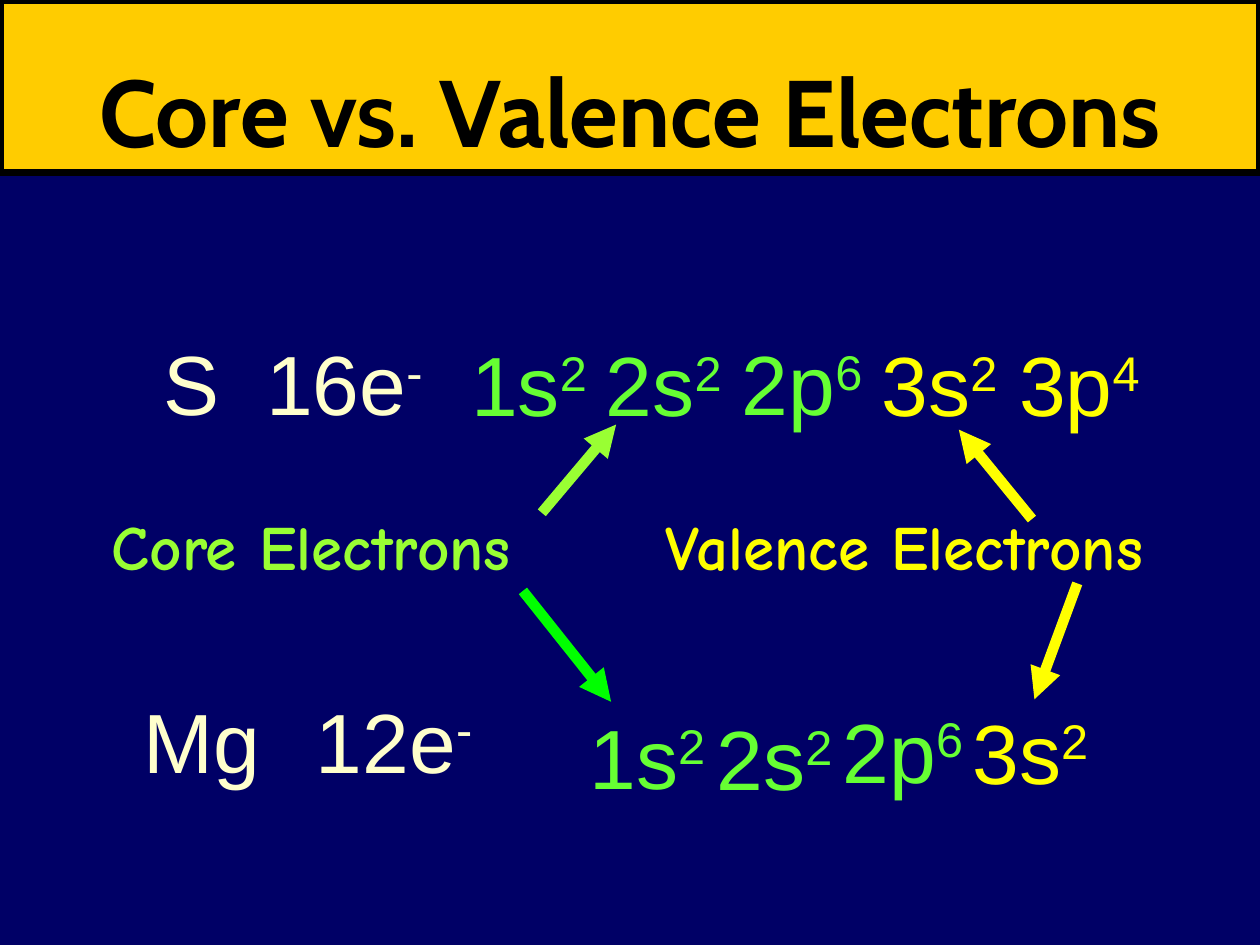
from lxml import etree
from pptx import Presentation
from pptx.dml.color import RGBColor
from pptx.enum.shapes import MSO_CONNECTOR, MSO_SHAPE
from pptx.enum.text import MSO_ANCHOR, PP_ALIGN
from pptx.oxml.ns import qn
from pptx.util import Inches, Pt

LINE = MSO_CONNECTOR.STRAIGHT
RECT = MSO_SHAPE.RECTANGLE
BOTTOM = MSO_ANCHOR.BOTTOM
CENTER = PP_ALIGN.CENTER

NAVY = RGBColor(0x00, 0x00, 0x66)
GOLD = RGBColor(0xFF, 0xCC, 0x00)
BLACK = RGBColor(0x00, 0x00, 0x00)
CREAM = RGBColor(0xFF, 0xFF, 0xCC)
GREEN = RGBColor(0x66, 0xFF, 0x33)
LIME = RGBColor(0x99, 0xFF, 0x33)
BRIGHT = RGBColor(0x00, 0xFF, 0x00)
YELLOW = RGBColor(0xFF, 0xFF, 0x00)


def add_run(para, text, font, size, color, bold=False):
    run = para.add_run()
    run.text = text
    run.font.name = font
    run.font.size = Pt(size)
    run.font.color.rgb = color
    run.font.bold = bold
    return run


def add_term(left, top, width, base, sup, color, wrap):
    """Add a large term that ends in a superscript."""
    box = slide.shapes.add_textbox(
        Inches(left), Inches(top), Inches(width), Inches(1.14))
    box.text_frame.word_wrap = wrap
    para = box.text_frame.paragraphs[0]
    para.line_spacing = 1.3
    add_run(para, base, "Arial", 48, color)
    run = add_run(para, sup, "Arial", 48, color)
    run.font._element.set("baseline", "30000")


prs = Presentation()
prs.slide_width = Inches(10)
prs.slide_height = Inches(7.5)
slide = prs.slides.add_slide(prs.slide_layouts[6])
slide.background.fill.solid()
slide.background.fill.fore_color.rgb = NAVY

# Title band
band = slide.shapes.add_shape(RECT, 0, 0, Inches(10), Inches(1.37))
band.shadow.inherit = False
band.fill.solid()
band.fill.fore_color.rgb = GOLD
band.line.color.rgb = BLACK
band.line.width = Pt(4.5)
band.text_frame.word_wrap = True
band.text_frame.vertical_anchor = BOTTOM
title = band.text_frame.paragraphs[0]
title.alignment = CENTER
add_run(title, "Core vs. Valence Electrons", "Cabin", 54, BLACK, True)

# Elements with their electron counts
add_term(1.2, 2.34, 2.4, "S  16e", "-", CREAM, True)
add_term(1.04, 5.18, 2.97, "Mg\t  12e", "-", CREAM, True)

# Subshells: sulfur above, magnesium below
shells = [
    (3.64, 2.35, "1s", "2", GREEN),
    (4.71, 2.35, "2s", "2", GREEN),
    (5.79, 2.34, "2p", "6", GREEN),
    (6.9, 2.35, "3s", "2", YELLOW),
    (7.99, 2.35, "3p", "4", YELLOW),
    (4.58, 5.31, "1s", "2", GREEN),
    (5.59, 5.32, "2s", "2", GREEN),
    (6.59, 5.26, "2p", "6", GREEN),
    (7.62, 5.27, "3s", "2", YELLOW),
]
for left, top, shell, count, color in shells:
    width = 1.19 if shell.endswith("p") else 1.15
    add_term(left, top, width, shell, count, color, False)

# Group labels
labels = [
    (0.79, 4.09, "Core Electrons", LIME),
    (5.18, 4.82, "Valence Electrons", YELLOW),
]
for left, width, text, color in labels:
    box = slide.shapes.add_textbox(
        Inches(left), Inches(3.98), Inches(width), Inches(0.7))
    box.text_frame.word_wrap = True
    add_run(box.text_frame.paragraphs[0], text, "Comic Neue", 36, color, True)

# Arrows from the labels to the subshells
arrows = [
    (4.3, 4.07, 4.89, 3.37, LIME),
    (8.19, 4.12, 7.61, 3.41, YELLOW),
    (4.15, 4.69, 4.85, 5.57, BRIGHT),
    (8.55, 4.63, 8.21, 5.55, YELLOW),
]
for *ends, color in arrows:
    arrow = slide.shapes.add_connector(LINE, *map(Inches, ends))
    arrow.line.color.rgb = color
    arrow.line.width = Pt(6)
    props = arrow._element.spPr
    etree.SubElement(props.find(qn("a:ln")), qn("a:tailEnd"), type="triangle")
    etree.SubElement(props, qn("a:effectLst"))

prs.save("out.pptx")
